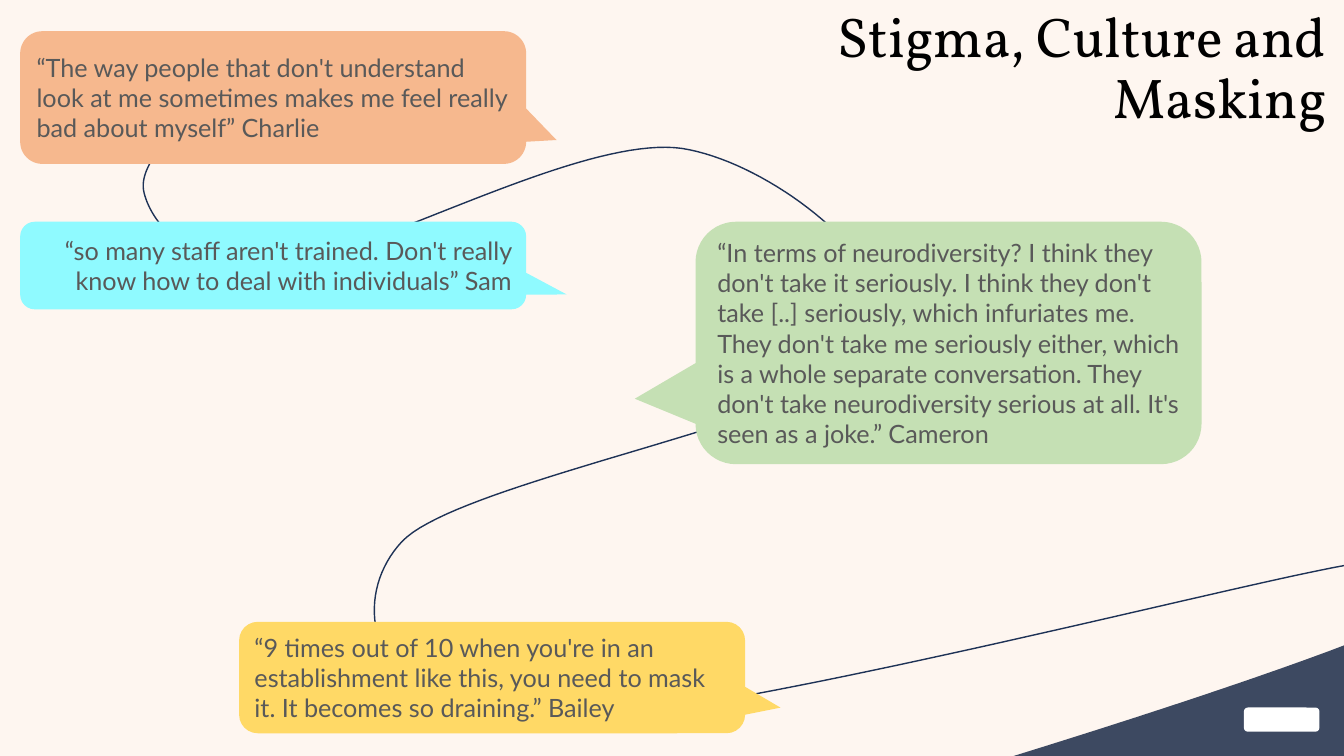
"""Build the slide on stigma, culture and masking."""
from dataclasses import dataclass

from pptx import Presentation
from pptx.dml.color import RGBColor
from pptx.enum.shapes import MSO_SHAPE
from pptx.enum.text import MSO_ANCHOR, PP_ALIGN
from pptx.shapes.autoshape import Shape
from pptx.slide import Slide
from pptx.text.text import TextFrame
from pptx.util import Pt

Point = tuple[float, float]


@dataclass
class Quote:
    text: str
    left: float
    top: float
    height: float
    fill: str
    tail: Point
    align: PP_ALIGN = PP_ALIGN.LEFT


QUOTE_WIDTH = 361.44
QUOTES = [
    Quote("“In terms of neurodiversity? I think they don't take it seriously. "
          "I think they don't take [..] seriously, which infuriates me. "
          "They don't take me seriously either, which is a whole separate conversation. "
          "They don't take neurodiversity serious at all. It's seen as a joke.” Cameron",
          496.8, 158.4, 173.2, "C5E0B4", (-0.62, 0.23)),
    Quote("“so many staff aren't trained. Don't really know how to deal with "
          "individuals” Sam",
          14.4, 158.4, 62.6, "8FFAFF", (0.58, 0.33), PP_ALIGN.RIGHT),
    Quote("“9 times out of 10 when you're in an establishment like this, you need "
          "to mask it. It becomes so draining.” Bailey",
          170.8, 444.2, 79.6, "FFD966", (0.57, 0.27)),
    Quote("“The way people that don't understand look at me sometimes makes me feel "
          "really bad about myself” Charlie",
          14.4, 22.3, 94.8, "F6B88E", (0.56, 0.32)),
]
THREAD: list[Point] = [
    (165, 56), (131, 86), (97, 116), (103, 138), (109, 161), (136, 194), (200, 189),
    (264, 183), (415, 96), (487, 106), (558, 117), (661, 204), (627, 251),
    (594, 298), (328, 343), (287, 387), (246, 431), (266, 514), (378, 516),
    (491, 519), (866, 421), (960, 404),
]
CORNER_EDGE: list[Point] = [(960, 461), (960, 461), (889, 489), (724, 540)]


def color(value: str) -> RGBColor:
    """Turn a hex string into a colour."""
    return RGBColor.from_string(value)


def flatten(knots: list[Point], steps: int = 40) -> list[Point]:
    """Return points along a chain of cubic curves."""
    points = [knots[0]]
    for i in range(0, len(knots) - 1, 3):
        for n in range(1, steps + 1):
            t = n / steps
            weights = ((1 - t) ** 3, 3 * t * (1 - t) ** 2, 3 * t * t * (1 - t), t ** 3)
            x, y = (sum(w * k[axis] for w, k in zip(weights, knots[i:i + 4]))
                    for axis in (0, 1))
            points.append((x, y))
    return points


def add_outline(s: Slide, points: list[Point], close: bool) -> Shape:
    """Draw a freeform through the points."""
    emu = [(Pt(x), Pt(y)) for x, y in points]
    builder = s.shapes.build_freeform(*emu[0])
    builder.add_line_segments(emu[1:], close=close)
    sp = builder.convert_to_shape()
    sp.shadow.inherit = False
    return sp


def paint(sp: Shape, fill: str) -> None:
    """Give a shape a plain fill without line or shadow."""
    sp.shadow.inherit = False
    sp.fill.solid()
    sp.fill.fore_color.rgb = color(fill)
    sp.line.fill.background()


def write(tf: TextFrame, text: str, font: str, size: float, hue: str,
          align: PP_ALIGN) -> None:
    """Fill a text frame with one formatted paragraph."""
    tf.word_wrap = True
    tf.vertical_anchor = MSO_ANCHOR.MIDDLE
    tf.text = text
    p = tf.paragraphs[0]
    p.alignment = align
    r = p.runs[0]
    r.font.name = font
    r.font.size = Pt(size)
    r.font.color.rgb = color(hue)


def add_quote(s: Slide, quote: Quote) -> None:
    """Draw one speech bubble."""
    sp = s.shapes.add_shape(MSO_SHAPE.ROUNDED_RECTANGULAR_CALLOUT, Pt(quote.left),
                            Pt(quote.top), Pt(QUOTE_WIDTH), Pt(quote.height))
    sp.adjustments[0], sp.adjustments[1] = quote.tail
    paint(sp, quote.fill)
    write(sp.text_frame, quote.text, "Lato", 18, "595959", quote.align)


def main() -> None:
    """Build and save the presentation."""
    prs = Presentation()
    prs.slide_width, prs.slide_height = Pt(960), Pt(540)
    s = prs.slides.add_slide(prs.slide_layouts[6])
    s.background.fill.solid()
    s.background.fill.fore_color.rgb = color("FEF6F0")

    thread = add_outline(s, flatten(THREAD), close=False)
    thread.fill.background()
    thread.line.color.rgb = color("1E3256")
    thread.line.width = Pt(1)

    title = s.shapes.add_textbox(Pt(456.5), Pt(-2.2), Pt(498.2), Pt(104.4))
    write(title.text_frame, "Stigma, Culture and Masking", "Vollkorn", 40, "000000",
          PP_ALIGN.RIGHT)
    title.text_frame.paragraphs[0].line_spacing = 0.9

    corner = add_outline(s, flatten(CORNER_EDGE) + [(960, 540)], close=True)
    paint(corner, "3D4961")

    badge = s.shapes.add_shape(MSO_SHAPE.ROUNDED_RECTANGLE, Pt(888.5), Pt(505.4),
                               Pt(54), Pt(17.3))
    paint(badge, "FFFFFF")

    for quote in QUOTES:
        add_quote(s, quote)
    prs.save("out.pptx")


if __name__ == "__main__":
    main()
